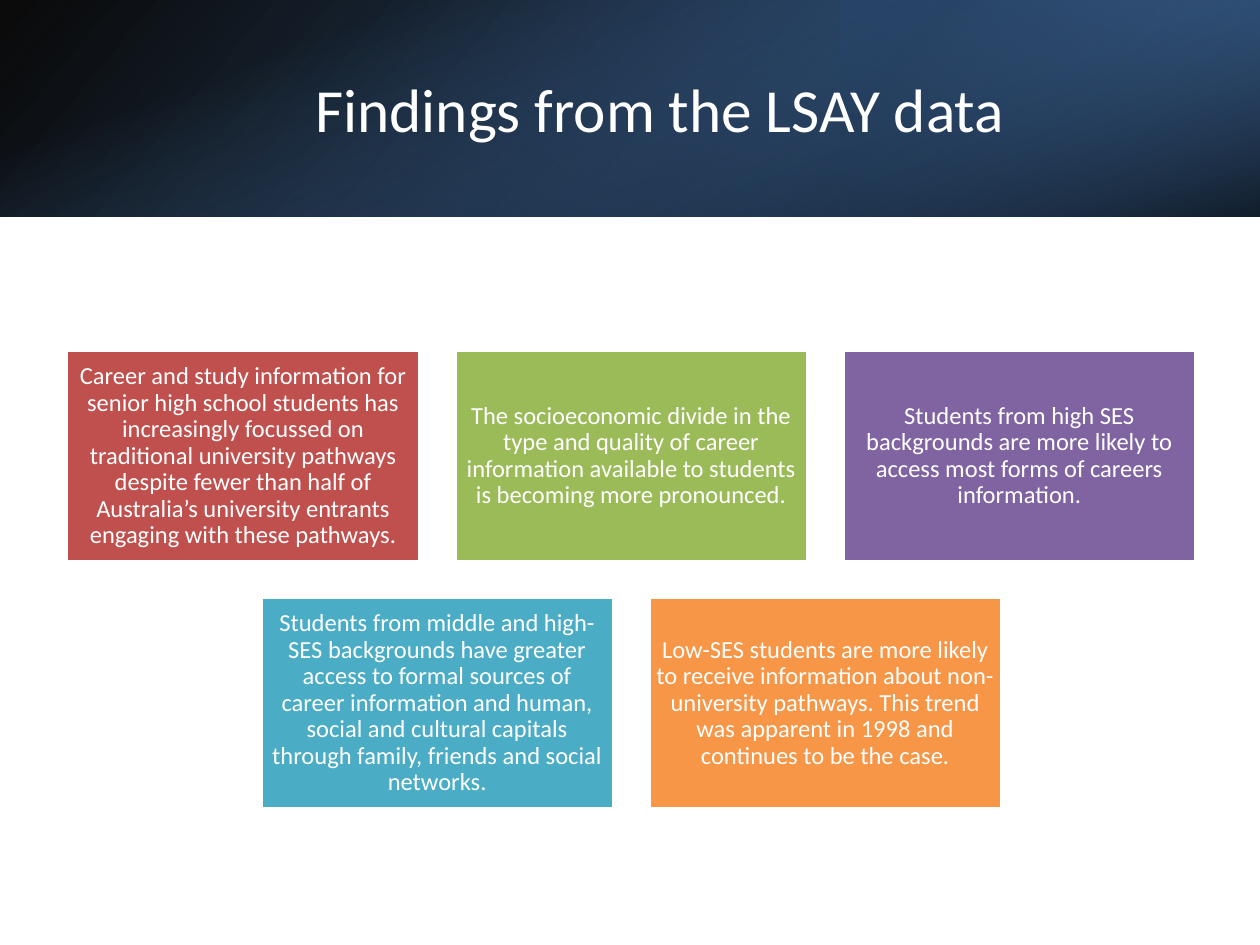
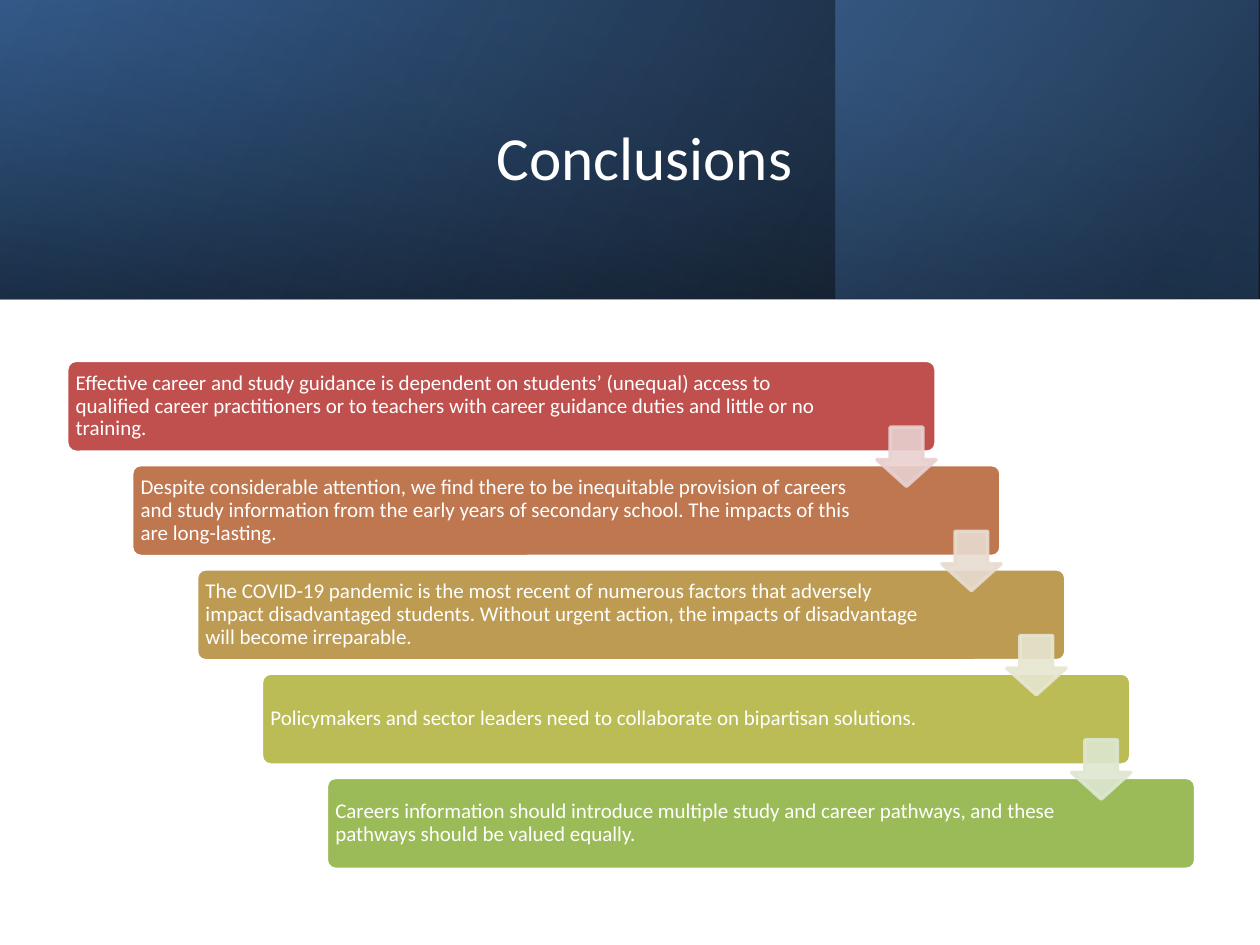
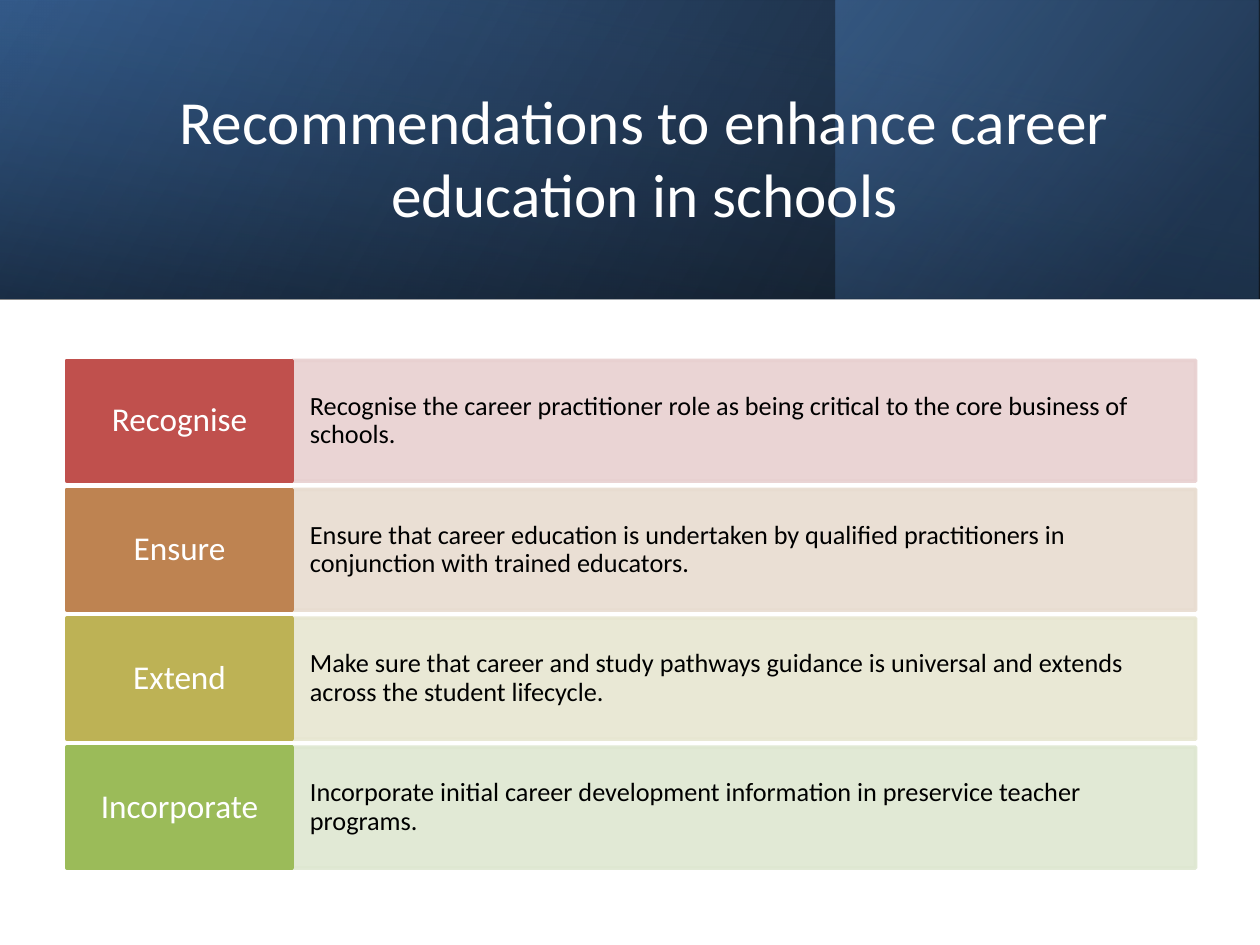
from lxml.etree import SubElement
from pptx import Presentation
from pptx.dml.color import RGBColor
from pptx.enum.shapes import MSO_SHAPE as Shape
from pptx.enum.text import MSO_ANCHOR as Anchor, PP_ALIGN as Align
from pptx.oxml.ns import qn
from pptx.util import Inches, Pt

FONT = "Calibri"
COLORS = {
    "white": "FFFFFF", "black": "000000",
    "navy": "254061", "blue": "376092", "sky": "4F81BD",
    "red": "C0504D", "green": "9BBB59", "purple": "8064A2",
    "aqua": "4BACC6", "orange": "F79646",
    "rust": "BF7750", "tan": "BD9B53", "olive": "BCBC56",
    "copper": "BE8351", "khaki": "BDB255",
    "pale red": "E8D0D0", "pale rust": "E8DCD0",
    "pale olive": "E7E6D1", "pale green": "DEE7D1",
}

# Band layers: (left, top, width, height), rotation, flipped, angle, stops.
# A stop is (position %, color, opacity %).
LOW_BAND = [
    ((0, 0, 10, 1.72), 0, True, 140, [(0, "black", 96), (100, "blue", 100)]),
    ((6.67, 0, 3.33, 1.72), 180, True, 320, [(19, "navy", 68), (100, "sky", 79)]),
    ((4.14, -4.14, 1.72, 10), 90, False, 340, [(23, "sky", 0), (99, "black", 74)]),
]
TALL_BAND = [
    ((0, 0, 10, 2.37), 0, True, 330, [(0, "black", 96), (100, "blue", 100)]),
    ((6.63, 0, 3.36, 2.37), 0, True, 320, [(19, "navy", 68), (100, "sky", 48)]),
    ((3.81, -3.81, 2.37, 10), 270, True, 350, [(23, "blue", 16), (99, "black", 45)]),
]
LOW_TITLE = (1.12, 0.38, 8.24, 0.96)
TALL_TITLE = (1.13, 0.38, 7.97, 1.72)

FINDING_ROWS = [
    [
        ("red", "Career and study information for senior high school students has "
                "increasingly focussed on traditional university pathways despite fewer "
                "than half of Australia’s university entrants engaging with these pathways."),
        ("green", "The socioeconomic divide in the type and quality of career information "
                  "available to students is becoming more pronounced."),
        ("purple", "Students from high SES backgrounds are more likely to access most "
                   "forms of careers information."),
    ],
    [
        ("aqua", "Students from middle and high-SES backgrounds have greater access to "
                 "formal sources of career information and human, social and cultural "
                 "capitals through family, friends and social networks."),
        ("orange", "Low-SES students are more likely to receive information about "
                   "non-university pathways. This trend was apparent in 1998 and "
                   "continues to be the case."),
    ],
]
CONCLUSIONS = [
    ("red", "Effective career and study guidance is dependent on students’ (unequal) access "
            "to qualified career practitioners or to teachers with career guidance duties "
            "and little or no training."),
    ("rust", "Despite considerable attention, we find there to be inequitable provision of "
             "careers and study information from the early years of secondary school. The "
             "impacts of this are long-lasting."),
    ("tan", "The COVID-19 pandemic is the most recent of numerous factors that adversely "
            "impact disadvantaged students. Without urgent action, the impacts of "
            "disadvantage will become irreparable."),
    ("olive", "Policymakers and sector leaders need to collaborate on bipartisan solutions."),
    ("green", "Careers information should introduce multiple study and career pathways, and "
              "these pathways should be valued equally."),
]
PALE = ["pale red", "pale rust", "pale olive", "pale green"]
RECOMMENDATIONS = [
    ("red", "Recognise", "Recognise the career practitioner role as being critical to the "
                         "core business of schools."),
    ("copper", "Ensure", "Ensure that career education is undertaken by qualified "
                         "practitioners in conjunction with trained educators."),
    ("khaki", "Extend", "Make sure that career and study pathways guidance is universal "
                        "and extends across the student lifecycle."),
    ("green", "Incorporate", "Incorporate initial career development information in "
                             "preservice teacher programs."),
]
LEFT, RIGHT, TOP = 0.53, 9.49, 2.86


def rgb(name):
    return RGBColor.from_string(COLORS[name])


def set_opacity(color_element, percent):
    SubElement(color_element, qn("a:alpha"), val=str(percent * 1000))


def spread(start, end, size, count):
    """Starts of equal parts that fill the length from start to end."""
    step = (end - start - size) / (count - 1)
    return [start + step * index for index in range(count)]


def write(shape, text, size, color="white", align=Align.CENTER, spacing=0.9,
          insets=(0.06, 0.06, 0.06, 0.06)):
    frame = shape.text_frame
    frame.word_wrap = True
    frame.vertical_anchor = Anchor.MIDDLE
    (frame.margin_left, frame.margin_top,
     frame.margin_right, frame.margin_bottom) = map(Inches, insets)
    para = frame.paragraphs[0]
    para.alignment = align
    para.line_spacing = spacing
    span = para.add_run()
    span.text = text
    span.font.name = FONT
    span.font.size = Pt(size)
    span.font.color.rgb = rgb(color)


def add_block(slide, kind, place, fill, line="white", opacity=100, adjust=()):
    block = slide.shapes.add_shape(kind, *map(Inches, place))
    block.shadow.inherit = False
    block.fill.solid()
    block.fill.fore_color.rgb = rgb(fill)
    block.line.color.rgb = rgb(line)
    block.line.width = Pt(2)
    for index, value in enumerate(adjust):
        block.adjustments[index] = value
    if opacity < 100:
        for color in block.element.spPr.iter(qn("a:srgbClr")):
            set_opacity(color, opacity)
    return block


def add_band_layer(slide, place, rotation, flipped, angle, stops):
    layer = slide.shapes.add_shape(Shape.RECTANGLE, *map(Inches, place))
    layer.shadow.inherit = False
    layer.line.fill.background()
    layer.rotation = rotation
    properties = layer.element.spPr
    if flipped:
        properties.find(qn("a:xfrm")).set("flipH", "1")
    layer.fill.gradient()
    layer.fill.gradient_angle = 360 - angle
    for stop, (position, color, _) in zip(layer.fill.gradient_stops, stops):
        stop.position = position / 100
        stop.color.rgb = rgb(color)
    for element, (_, _, opacity) in zip(list(properties.iter(qn("a:srgbClr"))), stops):
        set_opacity(element, opacity)


def add_titled_slide(deck, title, band, place):
    slide = deck.slides.add_slide(deck.slide_layouts[6])
    for layer in band:
        add_band_layer(slide, *layer)
    box = slide.shapes.add_textbox(*map(Inches, place))
    write(box, title, 35, spacing=1.0, insets=(0.1, 0.05, 0.1, 0.05))
    return slide


def add_findings(deck):
    slide = add_titled_slide(deck, "Findings from the LSAY data", LOW_BAND, LOW_TITLE)
    width, height, gap = 2.8, 1.68, 0.28
    for row, findings in enumerate(FINDING_ROWS):
        row_width = len(findings) * (width + gap) - gap
        row_left = (LEFT + RIGHT - row_width) / 2
        for column, (color, text) in enumerate(findings):
            place = (row_left + column * (width + gap), 2.78 + row * (height + gap),
                     width, height)
            write(add_block(slide, Shape.RECTANGLE, place, color), text, 14)


def add_conclusions(deck):
    slide = add_titled_slide(deck, "Conclusions", TALL_BAND, TALL_TITLE)
    width, height, arrow_size = 6.9, 0.73, 0.47
    count = len(CONCLUSIONS)
    steps = list(zip(spread(LEFT, RIGHT, width, count), spread(TOP, 6.9, height, count)))
    for index, ((left, top), (color, text)) in enumerate(zip(steps, CONCLUSIONS)):
        bar = add_block(slide, Shape.ROUNDED_RECTANGLE, (left, top, width, height),
                        color, adjust=[0.1])
        right_inset = 1.04 if index else 0.88
        write(bar, text, 12, align=Align.LEFT, insets=(0.05, 0.05, right_inset, 0.05))
    for (left, top), color in zip(steps, PALE):
        place = (left + width - arrow_size, top + 0.53, arrow_size, arrow_size)
        add_block(slide, Shape.DOWN_ARROW, place, color, color, 90, [0.55, 0.45])


def add_recommendations(deck):
    slide = add_titled_slide(deck, "Recommendations to enhance career education in schools",
                             TALL_BAND, TALL_TITLE)
    label_width, height = 1.79, 0.96
    detail_left = LEFT + label_width
    tops = spread(TOP, 6.89, height, len(RECOMMENDATIONS))
    for top, pale, (color, label, detail) in zip(tops, PALE, RECOMMENDATIONS):
        panel = add_block(slide, Shape.RECTANGLE,
                          (detail_left, top, RIGHT - detail_left, height), pale, pale, 90)
        write(panel, detail, 15, "black", Align.LEFT, insets=(0.14, 0.24, 0.14, 0.24))
        tab = add_block(slide, Shape.RECTANGLE, (LEFT, top, label_width, height),
                        color, color)
        write(tab, label, 19, insets=(0.09, 0.1, 0.09, 0.1))


def main():
    deck = Presentation()
    deck.slide_width, deck.slide_height = Inches(10), Inches(7.5)
    add_findings(deck)
    add_conclusions(deck)
    add_recommendations(deck)
    deck.save("out.pptx")


if __name__ == "__main__":
    main()
